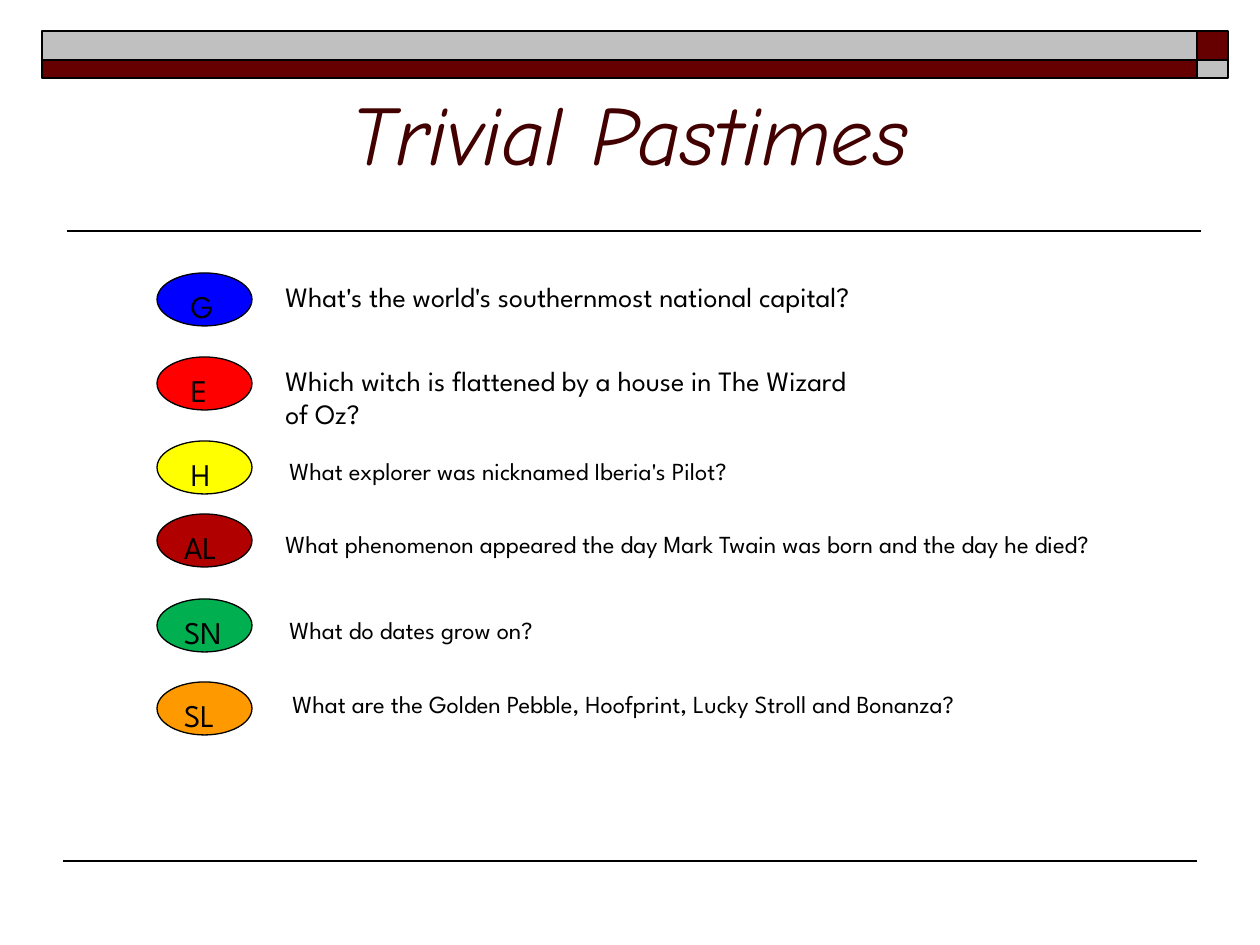
import dataclasses

import pptx
import pptx.dml.color
import pptx.enum.shapes
import pptx.enum.text
import pptx.oxml.ns
import pptx.util
from lxml import etree

EMU_PER_PX = 914400 / 126
COLORS = {
    "black": "000000",
    "maroon": "660000",
    "silver": "C0C0C0",
    "title": "420000",
    "blue": "0000FF",
    "red": "FF0000",
    "yellow": "FFFF00",
    "brown": "B10000",
    "green": "00B050",
    "orange": "FF9900",
}
TITLE_FONT = "Comic Neue"
BODY_FONT = "League Spartan"
BADGE_LEFT, BADGE_WIDTH, BADGE_HEIGHT = 157, 95, 53
BADGE_INSET, SINGLE_LETTER_INSET = 13, 20


@dataclasses.dataclass(frozen=True)
class Bar:
    left: int
    top: int
    width: int
    height: int
    color: str


@dataclasses.dataclass(frozen=True)
class Question:
    letters: str
    color: str
    badge_top: int
    text: str
    left: int
    top: int
    width: int
    height: int
    size: int


BARS = [
    Bar(1197, 31, 31, 29, "maroon"),
    Bar(42, 31, 1155, 29, "silver"),
    Bar(42, 60, 1155, 18, "maroon"),
    Bar(1197, 60, 31, 18, "silver"),
]

QUESTIONS = [
    Question("G", "blue", 273, "What's the world's southernmost national capital?",
             273, 273, 777, 47, 16),
    Question("E", "red", 357, "Which witch is flattened by a house in The Wizard of Oz?",
             273, 357, 609, 81, 16),
    Question("H", "yellow", 441, "What explorer was nicknamed Iberia's Pilot?",
             277, 450, 651, 43, 14),
    Question("AL", "brown", 514,
             "What phenomenon appeared the day Mark Twain was born and the day he died?",
             273, 523, 892, 43, 14),
    Question("SN", "green", 599, "What do dates grow on?",
             277, 609, 819, 43, 14),
    Question("SL", "orange", 682,
             "What are the Golden Pebble, Hoofprint, Lucky Stroll and Bonanza?",
             280, 683, 903, 43, 14),
]


def px(length: int) -> pptx.util.Emu:
    return pptx.util.Emu(round(length * EMU_PER_PX))


def rgb(name: str) -> pptx.dml.color.RGBColor:
    return pptx.dml.color.RGBColor.from_string(COLORS[name])


def write(box, text: str, font: str, size: int, color: str = "black"):
    box.text_frame.word_wrap = True
    paragraph = box.text_frame.paragraphs[0]
    paragraph.text = text
    paragraph.font.name = font
    paragraph.font.size = pptx.util.Pt(size)
    paragraph.font.color.rgb = rgb(color)
    return paragraph


def add_filled(page, kind, bar: Bar, line_width: float):
    shape = page.shapes.add_shape(
        kind, px(bar.left), px(bar.top), px(bar.width), px(bar.height))
    shape.shadow.inherit = False
    shape.fill.solid()
    shape.fill.fore_color.rgb = rgb(bar.color)
    shape.line.color.rgb = rgb("black")
    shape.line.width = pptx.util.Pt(line_width)
    return shape


def add_rule(page, start: int, end: int, top: int, line_width: float) -> None:
    rule = page.shapes.add_connector(
        pptx.enum.shapes.MSO_CONNECTOR.STRAIGHT, px(start), px(top), px(end), px(top))
    rule.line.color.rgb = rgb("black")
    rule.line.width = pptx.util.Pt(line_width)
    etree.SubElement(rule._element.spPr, pptx.oxml.ns.qn("a:effectLst"))


def add_title(page, text: str) -> None:
    box = page.shapes.add_textbox(px(63), px(31), px(1134), px(158))
    box.text_frame.vertical_anchor = pptx.enum.text.MSO_ANCHOR.BOTTOM
    paragraph = write(box, text, TITLE_FONT, 48, "title")
    paragraph.alignment = pptx.enum.text.PP_ALIGN.CENTER
    paragraph.font.italic = True


def add_question(page, question: Question) -> None:
    badge = add_filled(
        page, pptx.enum.shapes.MSO_SHAPE.OVAL,
        Bar(BADGE_LEFT, question.badge_top, BADGE_WIDTH, BADGE_HEIGHT, question.color), 0.75)
    badge.text_frame.vertical_anchor = pptx.enum.text.MSO_ANCHOR.TOP
    inset = SINGLE_LETTER_INSET if len(question.letters) == 1 else BADGE_INSET
    badge.text_frame.margin_left = px(inset)
    letters = write(badge, question.letters, BODY_FONT, 18)
    letters.alignment = pptx.enum.text.PP_ALIGN.LEFT

    box = page.shapes.add_textbox(
        px(question.left), px(question.top), px(question.width), px(question.height))
    write(box, question.text, BODY_FONT, question.size)


def main() -> None:
    deck = pptx.Presentation()
    deck.slide_width = px(1260)
    deck.slide_height = px(945)
    page = deck.slides.add_slide(deck.slide_layouts[6])

    add_rule(page, 1201, 67, 231, 1)
    for bar in BARS:
        add_filled(page, pptx.enum.shapes.MSO_SHAPE.RECTANGLE, bar, 1)
    add_rule(page, 63, 1197, 861, 0.75)
    add_title(page, "Trivial Pastimes")
    for question in QUESTIONS:
        add_question(page, question)

    deck.save("out.pptx")


if __name__ == "__main__":
    main()
